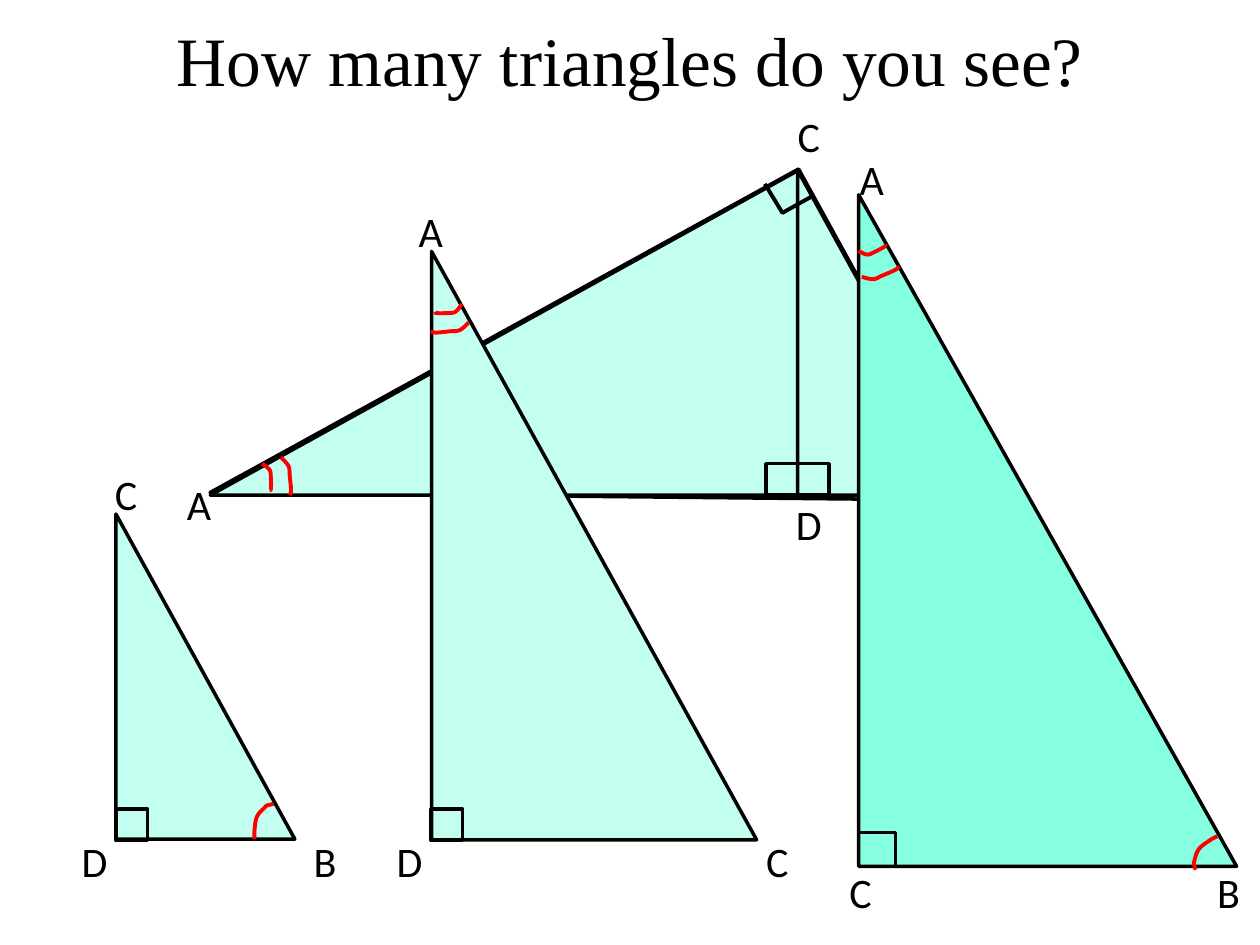
"""Build a slide of similar right triangles with angle marks."""
from math import cos, radians, sin

from pptx import Presentation
from pptx.dml.color import RGBColor
from pptx.enum.shapes import MSO_SHAPE
from pptx.enum.text import MSO_ANCHOR, PP_ALIGN
from pptx.util import Cm, Pt

TRI, RECT = MSO_SHAPE.RIGHT_TRIANGLE, MSO_SHAPE.RECTANGLE
MID, TOP, CENTER = MSO_ANCHOR.MIDDLE, MSO_ANCHOR.TOP, PP_ALIGN.CENTER
BLACK, RED, PALE, MINT = "000000", "FF0000", "C2FFF0", "85FFE0"

TITLE = "How many triangles do you see?"
LABELS = [
    ("A", 1.33, 3.75), ("C", 6.17, 0.83), ("D", 6.17, 3.91),
    ("B", 2.33, 6.58), ("C", 0.75, 3.67), ("D", 0.5, 6.58),
    ("C", 5.92, 6.58), ("A", 3.17, 1.58), ("D", 3, 6.58),
    ("B", 9.5, 6.83), ("A", 6.67, 1.17), ("C", 6.58, 6.83),
]
SMALL, MEDIUM, LARGE = (1.42, 2.58), (4.67, 2.58), (5.33, 3)
TRIANGLES = [
    (2.06, 2.44, LARGE, 151.2, False, MINT),
    (1.67, 1.35, MEDIUM, 0, True, PALE),
    (6.33, 1.35, SMALL, 0, False, PALE),
    (2.38, 3.04, MEDIUM, 90, True, PALE),
    (5.65, 2.71, LARGE, 90, True, MINT),
    (0.92, 4.08, SMALL, 0, False, PALE),
]
SIDE = 0.25
SQUARES = [(6.08, 3.68), (6.33, 3.68), (3.42, 6.42), (0.92, 6.42)]
CORNERS = [
    ([(6.07, 1.46), (6.21, 1.69), (6.46, 1.55)], 2.25),
    ([(6.81, 6.61), (7.11, 6.61), (7.11, 6.88)], 1.5),
]
CURVES = {
    "single": ((0.15, 0.28), [(0, 0.28), (0, 0.21), (0.02, 0.1),
                              (0.09, 0.02), (0.11, 0.01), (0.15, 0)]),
    "inner": ((0.07, 0.22), [(0, 0), (0.06, 0.05), (0.07, 0.12),
                             (0.07, 0.2), (0.06, 0.21)]),
    "outer": ((0.08, 0.3), [(0, 0), (0.06, 0.07), (0.07, 0.15),
                            (0.08, 0.26), (0.07, 0.3)]),
}
ARCS = [
    ("inner", 2.08, 3.68, 0, False), ("outer", 2.23, 3.63, 0, False),
    ("inner", 3.52, 2.34, 90, False), ("outer", 3.53, 2.45, 90, False),
    ("single", 9.5, 6.63, 241.2, True), ("inner", 6.89, 1.86, 241.2, True),
    ("outer", 6.95, 2.01, 241.2, True), ("single", 2.02, 6.38, 0, False),
]
STEPS = 5


def inch(val):
    return Cm(val * 2.54)


def color(code):
    return RGBColor.from_string(code)


def style(shape, fill, line, width):
    shape.shadow.inherit = False
    if fill:
        shape.fill.solid()
        shape.fill.fore_color.rgb = color(fill)
    else:
        shape.fill.background()
    shape.line.color.rgb = color(line)
    shape.line.width = Pt(width)


def add_text(slide, text, box, font, size, anchor):
    frame = slide.shapes.add_textbox(*map(inch, box)).text_frame
    frame.word_wrap = True
    frame.vertical_anchor = anchor
    frame.text = text
    para = frame.paragraphs[0]
    para.alignment = CENTER
    face = para.runs[0].font
    face.name, face.size = font, Pt(size)
    face.color.rgb = color(BLACK)


def add_form(slide, kind, box, fill, turn=0, flip=False):
    shape = slide.shapes.add_shape(kind, *map(inch, box))
    shape.rotation = turn
    if flip:
        shape.element.spPr.xfrm.set("flipH", "1")
    style(shape, fill, BLACK, 2)


def add_path(slide, points, line, width):
    spots = [(inch(x), inch(y)) for x, y in points]
    build = slide.shapes.build_freeform(*spots[0])
    build.add_line_segments(spots[1:], close=False)
    style(build.convert_to_shape(), None, line, width)


def smooth(points):
    ends = [points[0], *points, points[-1]]
    out = [points[0]]
    for a, b, c, d in zip(ends, ends[1:], ends[2:], ends[3:]):
        for step in range(1, STEPS + 1):
            t = step / STEPS
            out.append(tuple(
                q + t / 2 * (r - p + t * (2 * p - 5 * q + 4 * r - s
                                          + t * (3 * q - p - 3 * r + s)))
                for p, q, r, s in zip(a, b, c, d)))
    return out


def place(points, size, left, top, turn, flip):
    wide, high = size
    co, si = cos(radians(turn)), sin(radians(turn))
    out = []
    for x, y in points:
        dx, dy = x - wide / 2, y - high / 2
        dx = -dx if flip else dx
        out.append((left + wide / 2 + dx * co - dy * si,
                    top + high / 2 + dx * si + dy * co))
    return out


def main():
    deck = Presentation()
    deck.slide_width, deck.slide_height = inch(10), inch(7.5)
    slide = deck.slides.add_slide(deck.slide_layouts[6])
    add_text(slide, TITLE, (0.5, 0.08, 9, 0.78), "Times New Roman", 39.6, MID)
    for left, top, size, turn, flip, fill in TRIANGLES:
        add_form(slide, TRI, (left, top, *size), fill, turn, flip)
    for left, top in SQUARES:
        add_form(slide, RECT, (left, top, SIDE, SIDE), None)
    for points, width in CORNERS:
        add_path(slide, points, BLACK, width)
    for name, *spot in ARCS:
        size, points = CURVES[name]
        add_path(slide, place(smooth(points), size, *spot), RED, 2.25)
    for text, left, top in LABELS:
        add_text(slide, text, (left, top, 0.5, 0.51), "Calibri", 24, TOP)
    deck.save("out.pptx")


if __name__ == "__main__":
    main()
